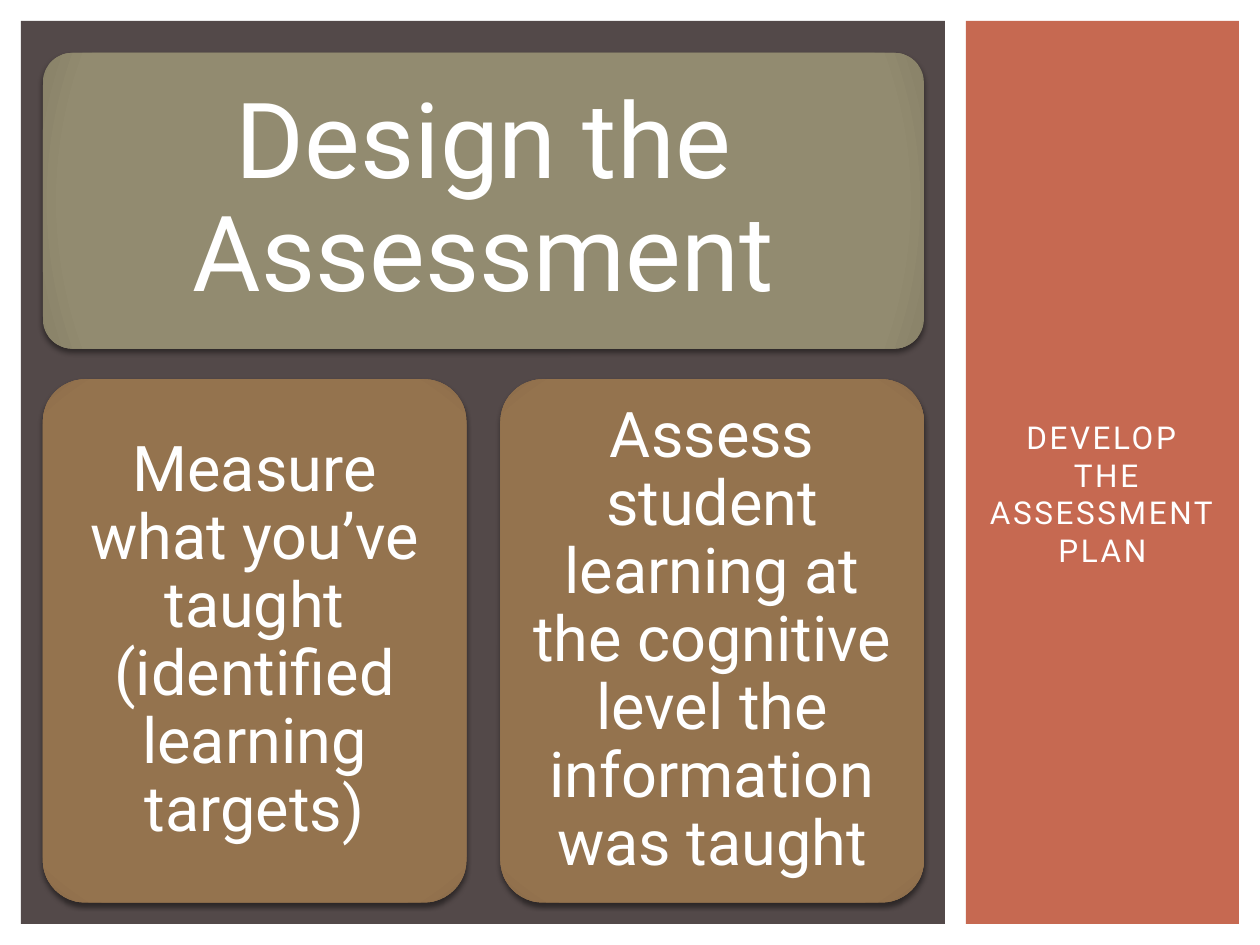
from lxml.etree import SubElement
from pptx import Presentation
from pptx.dml.color import RGBColor
from pptx.enum.shapes import MSO_SHAPE
from pptx.enum.text import MSO_ANCHOR, PP_ALIGN
from pptx.oxml import parse_xml
from pptx.oxml.ns import nsdecls, qn
from pptx.util import Pt

MARGIN = 12
PANEL_H = 516
CARD_LEFT = 24.5
CARD_W = 503.5
HALF_W = 242
OLIVE = ("928B70", "888268")
BROWN = ("94734E", "8A6B49")


def color(hex_text):
    return RGBColor.from_string(hex_text)


def add_block(s, kind, x, y, w, h):
    sp = s.shapes.add_shape(kind, Pt(x), Pt(y), Pt(w), Pt(h))
    sp.shadow.inherit = False
    sp.line.fill.background()
    return sp


def add_panel(s, x, w, fill):
    sp = add_block(s, MSO_SHAPE.RECTANGLE, x, MARGIN, w, PANEL_H)
    sp.fill.solid()
    sp.fill.fore_color.rgb = color(fill)


def set_radial_fill(sp, inner, edge):
    """Fill with one colour that darkens slightly at the rim."""
    stops = "".join(
        f'<a:gs pos="{pos}"><a:srgbClr val="{c}"/></a:gs>'
        for pos, c in ((0, inner), (90000, inner), (100000, edge)))
    grad = parse_xml(
        f'<a:gradFill {nsdecls("a")} rotWithShape="1"><a:gsLst>{stops}</a:gsLst>'
        '<a:path path="circle"><a:fillToRect l="100000" t="100000" '
        'r="100000" b="100000"/></a:path></a:gradFill>')
    sp.fill.background()
    spPr = sp._element.spPr
    spPr.replace(spPr.find(qn("a:noFill")), grad)


def add_drop_shadow(sp):
    effects = sp._element.spPr.find(qn("a:effectLst"))
    shadow = SubElement(effects, qn("a:outerShdw"), blurRad=str(Pt(3)),
                        dist=str(Pt(2)), dir="5400000", rotWithShape="0")
    black = SubElement(shadow, qn("a:srgbClr"), val="000000")
    SubElement(black, qn("a:alpha"), val="45000")


def write_text(sp, text, size):
    """Put centred white text in a shape and return its paragraph."""
    tf = sp.text_frame
    tf.word_wrap = True
    tf.vertical_anchor = MSO_ANCHOR.MIDDLE
    p = tf.paragraphs[0]
    p.text = text
    p.alignment = PP_ALIGN.CENTER
    p.font.name = "Roboto"
    p.font.size = Pt(size)
    p.font.color.rgb = color("FFFFFF")
    return p


def add_card(s, x, y, w, h, colors, text, size, inset):
    sp = add_block(s, MSO_SHAPE.ROUNDED_RECTANGLE, x, y, w, h)
    sp.adjustments[0] = 0.1
    set_radial_fill(sp, *colors)
    add_drop_shadow(sp)
    tf = sp.text_frame
    tf.margin_left = tf.margin_right = Pt(inset)
    tf.margin_top = tf.margin_bottom = Pt(inset)
    write_text(sp, text, size).line_spacing = 0.9


def add_title(s, text):
    tb = s.shapes.add_textbox(Pt(558), Pt(210), Pt(144), Pt(144))
    p = write_text(tb, text, 18)
    p._p.pPr.find(qn("a:defRPr")).set("spc", "150")


def main():
    prs = Presentation()
    prs.slide_width, prs.slide_height = Pt(720), Pt(540)
    s = prs.slides.add_slide(prs.slide_layouts[6])

    add_panel(s, 552, 156, "C66951")
    add_panel(s, MARGIN, 528, "534949")
    add_title(s, "DEVELOP\v THE ASSESSMENT PLAN")

    add_card(s, CARD_LEFT, 30.25, CARD_W, 169, OLIVE,
             "Design the Assessment", 60, 18)
    goals = ("Measure what you’ve taught (identified learning targets)",
             "Assess student learning at the cognitive level "
             "the information was taught")
    for i, goal in enumerate(goals):
        add_card(s, CARD_LEFT + i * (CARD_W - HALF_W), 216.75, HALF_W, 299,
                 BROWN, goal, 36, 10.8)

    prs.save("out.pptx")


if __name__ == "__main__":
    main()
